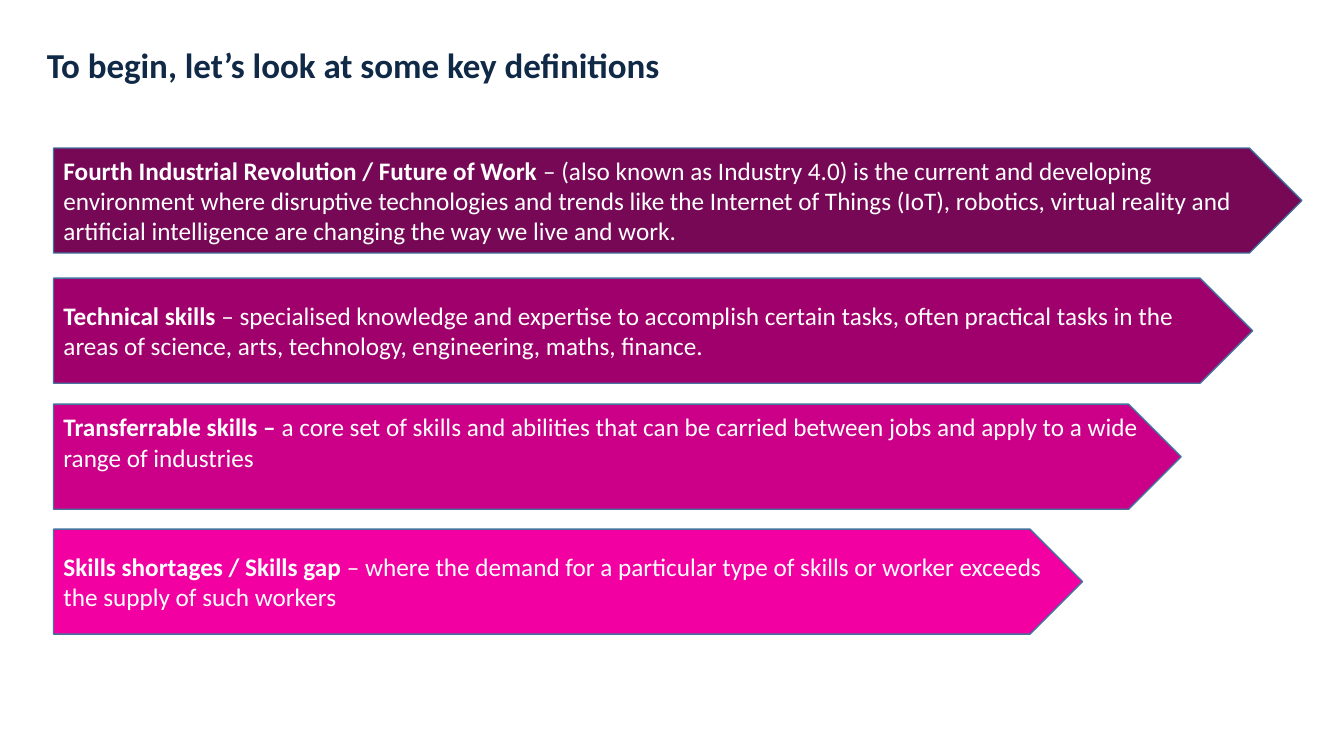
"""Builds a slide of key definitions in four shrinking arrows."""
from pptx import Presentation
from pptx.dml.color import RGBColor
from pptx.enum.shapes import MSO_SHAPE
from pptx.enum.text import MSO_ANCHOR, MSO_AUTO_SIZE, PP_ALIGN
from pptx.util import Pt

PX = 9525
COLORS = {
    "title": "0F2946", "text": "FFFFFF", "line": "43739E",
    "plum": "760856", "berry": "A0006C", "magenta": "CC0088", "pink": "F200A1",
}
LEFT, HEIGHT = 51, 100
DEFINITIONS = [
    (141, 1189, 5, "plum", "Fourth Industrial Revolution / Future of Work ",
     "– (also known as Industry 4.0) is the current and developing environment where "
     "disruptive technologies and trends like the Internet of Things (IoT), robotics, "
     "virtual reality and artificial intelligence are changing the way we live and work."),
    (265, 1142, 5, "berry", "Technical skills ",
     "– specialised knowledge and expertise to accomplish certain tasks, often practical "
     "tasks in the areas of science, arts, technology, engineering, maths, finance."),
    (385, 1074, 33, "magenta", "Transferrable skills –",
     " a core set of skills and abilities that can be carried between jobs and apply to "
     "a wide range of industries"),
    (504, 980, 5, "pink", "Skills shortages / Skills gap ",
     "– where the demand for a particular type of skills or worker exceeds the supply of "
     "such workers"),
]


def add_run(p, text, size=18, color="text", bold=False):
    r = p.add_run()
    r.text = text
    r.font.name = "Calibri"
    r.font.size = Pt(size)
    r.font.bold = bold
    r.font.color.rgb = RGBColor.from_string(COLORS[color])


prs = Presentation()
prs.slide_width, prs.slide_height = 1280 * PX, 720 * PX
s = prs.slides.add_slide(prs.slide_layouts[5])

title = s.shapes.title
title.left, title.top, title.width, title.height = 35 * PX, 36 * PX, 611 * PX, 50 * PX
tf = title.text_frame
tf.word_wrap = False
tf.auto_size = MSO_AUTO_SIZE.NONE
tf.vertical_anchor = MSO_ANCHOR.MIDDLE
p = tf.paragraphs[0]
p.alignment = PP_ALIGN.LEFT
add_run(p, "To begin, let’s look at some key definitions", size=25, color="title", bold=True)

for top, width, bottom_margin, color, term, meaning in DEFINITIONS:
    sp = s.shapes.add_shape(MSO_SHAPE.PENTAGON, LEFT * PX, top * PX, width * PX, HEIGHT * PX)
    sp.shadow.inherit = False
    sp.fill.solid()
    sp.fill.fore_color.rgb = RGBColor.from_string(COLORS[color])
    sp.line.color.rgb = RGBColor.from_string(COLORS["line"])
    sp.line.width = Pt(1)
    tf = sp.text_frame
    tf.word_wrap = True
    tf.vertical_anchor = MSO_ANCHOR.MIDDLE
    tf.margin_bottom = bottom_margin * PX
    p = tf.paragraphs[0]
    p.alignment = PP_ALIGN.LEFT
    add_run(p, term, bold=True)
    add_run(p, meaning)

prs.save("out.pptx")
